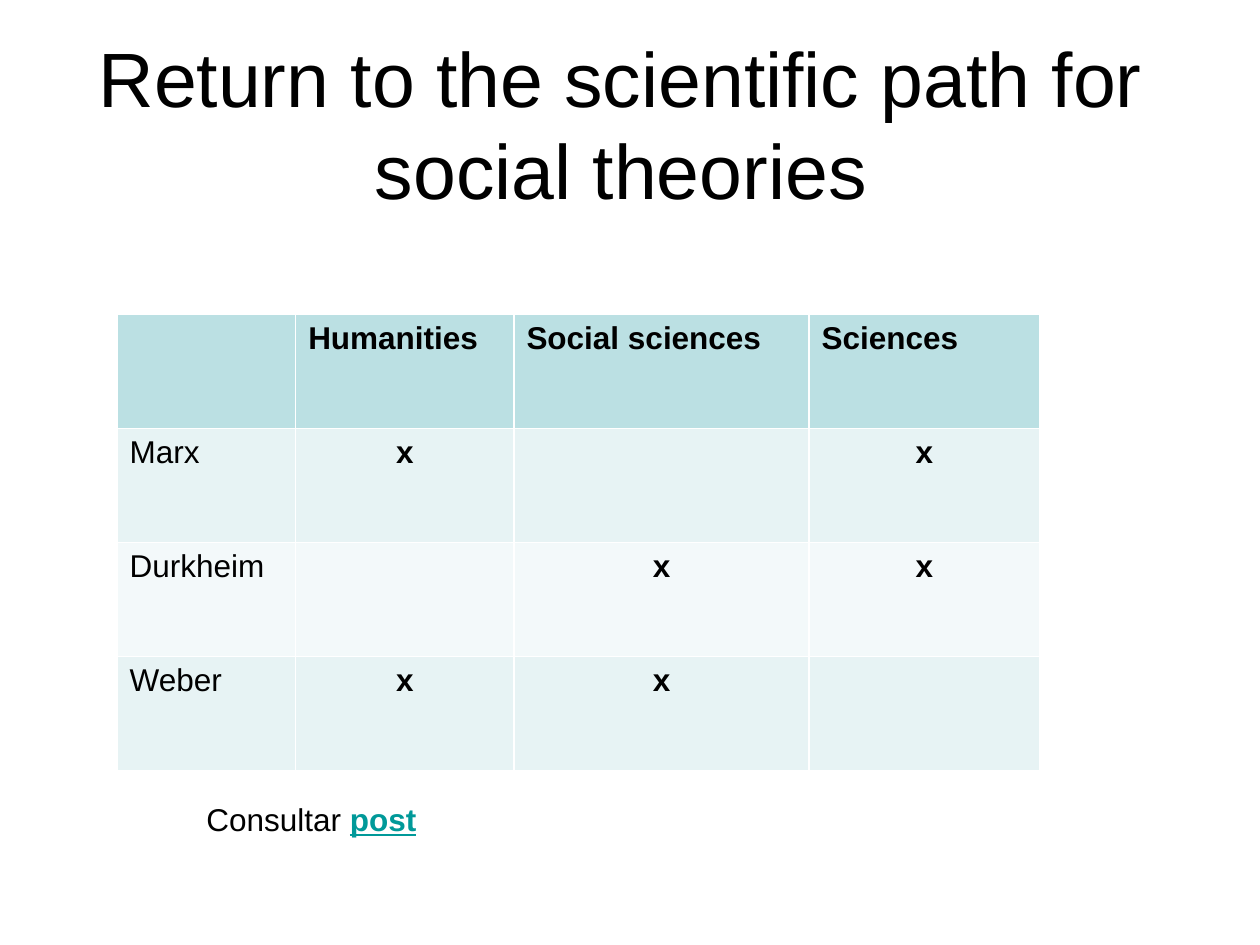
import pptx
import pptx.dml.color
import pptx.enum.text
import pptx.util

Cm = pptx.util.Cm
Align = pptx.enum.text.PP_ALIGN

TITLE = "Return to the scientific path for social theories"
ROWS = [
    ("", "Humanities", "Social sciences", "Sciences"),
    ("Marx", "x", "", "x"),
    ("Durkheim", "", "x", "x"),
    ("Weber", "x", "x", ""),
]
COLUMN_WIDTHS = (3.6, 4.4, 5.95, 4.65)
ROW_HEIGHT = 2.3
HEADER_FILL = "BBE0E3"
BAND_FILLS = ("E7F3F4", "F3F9FA")
NOTE = [("Consultar ", "000000", False), ("post", "009999", True)]


def style(font, size, color="000000", bold=False):
    """Apply the slide's typeface with the given size, colour and weight."""
    font.name = "Arial"
    font.size = pptx.util.Pt(size)
    font.color.rgb = pptx.dml.color.RGBColor.from_string(color)
    font.bold = bold


def add_title(page):
    """Fill the title placeholder, raising its text with a deep bottom inset."""
    title = page.shapes.title
    title.left, title.top, title.width, title.height = Cm(1.09), Cm(1.73), Cm(22.86), Cm(3.18)
    frame = title.text_frame
    frame.text = TITLE
    frame.word_wrap = True
    frame.auto_size = pptx.enum.text.MSO_AUTO_SIZE.NONE
    frame.vertical_anchor = pptx.enum.text.MSO_ANCHOR.MIDDLE
    frame.margin_bottom = Cm(1.83)
    frame.paragraphs[0].alignment = Align.CENTER
    style(frame.paragraphs[0].runs[0].font, 44)


def add_theory_table(page):
    """Add the table of thinkers against fields of knowledge."""
    table = page.shapes.add_table(
        len(ROWS), len(COLUMN_WIDTHS), Cm(2.36), Cm(6.34),
        Cm(sum(COLUMN_WIDTHS)), Cm(ROW_HEIGHT * len(ROWS)),
    ).table
    for column, width in zip(table.columns, COLUMN_WIDTHS):
        column.width = Cm(width)
    for row, texts in enumerate(ROWS):
        fill = BAND_FILLS[(row - 1) % 2] if row else HEADER_FILL
        for column, text in enumerate(texts):
            cell = table.cell(row, column)
            cell.text = text
            cell.fill.solid()
            cell.fill.fore_color.rgb = pptx.dml.color.RGBColor.from_string(fill)
            para = cell.text_frame.paragraphs[0]
            para.alignment = Align.CENTER if row and column else Align.LEFT
            style(para.font, 18)
            for span in para.runs:
                style(span.font, 18, bold=row == 0 or column > 0)


def add_note(page):
    """Add the reference line under the table."""
    box = page.shapes.add_textbox(Cm(3.91), Cm(16), Cm(4.78), Cm(1.02))
    box.text_frame.word_wrap = False
    para = box.text_frame.paragraphs[0]
    for text, color, emphasised in NOTE:
        span = para.add_run()
        span.text = text
        style(span.font, 18, color, emphasised)
        span.font.underline = emphasised


def main():
    """Build the slide and save the deck."""
    deck = pptx.Presentation()
    deck.slide_width, deck.slide_height = Cm(25.4), Cm(19.05)
    page = deck.slides.add_slide(deck.slide_layouts[5])
    add_title(page)
    add_theory_table(page)
    add_note(page)
    deck.save("out.pptx")


if __name__ == "__main__":
    main()
